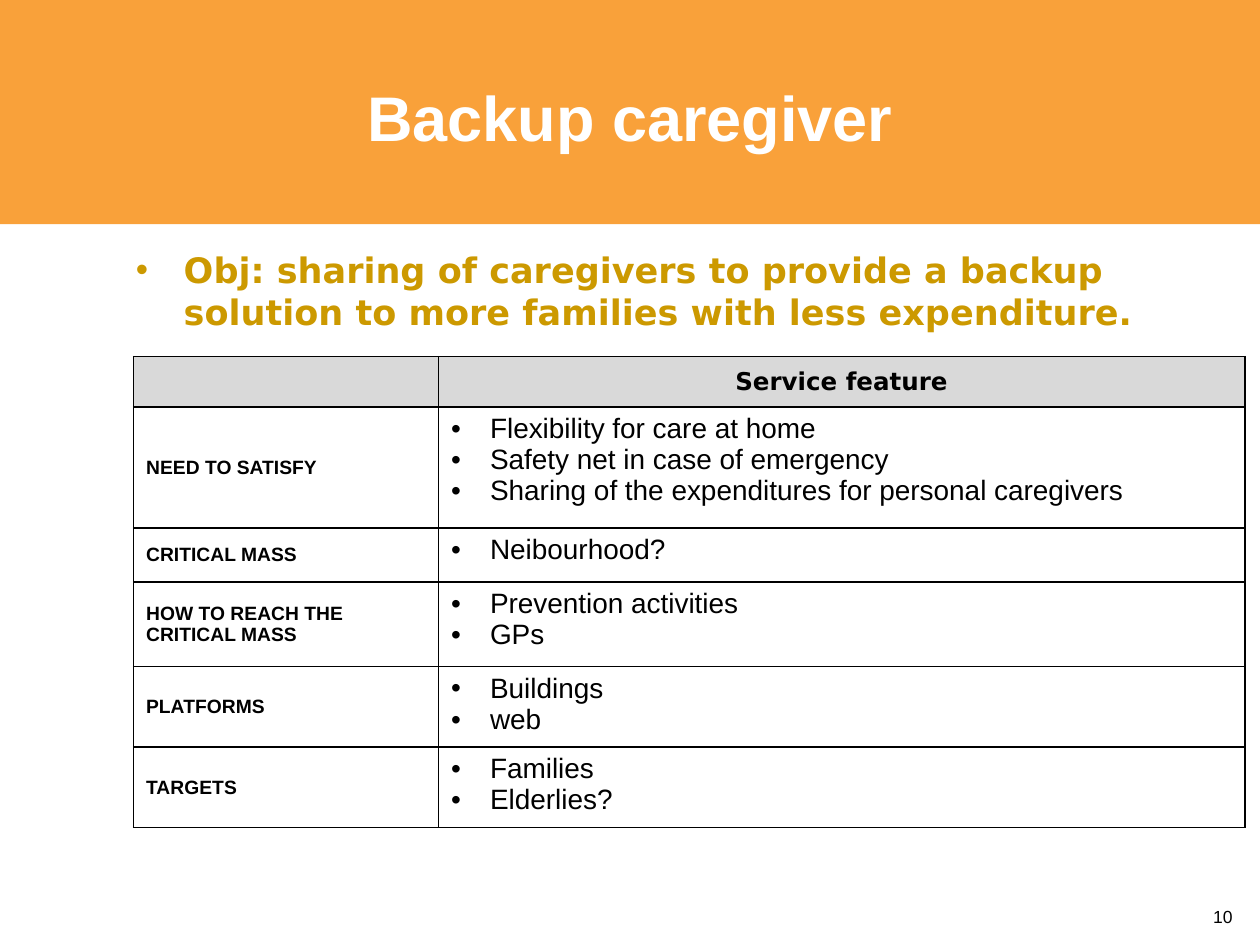
from pptx import Presentation
from pptx.dml.color import RGBColor
from pptx.enum.shapes import MSO_SHAPE
from pptx.enum.text import MSO_ANCHOR, PP_ALIGN
from pptx.oxml import parse_xml
from pptx.oxml.ns import nsdecls
from pptx.util import Inches, Pt

# Content
TITLE = "Backup caregiver"
OBJECTIVE = ("Obj: sharing of caregivers to provide a backup solution "
             "to more families with less expenditure.")
PAGE_NUMBER = "10"
HEADER = "Service feature"
HEADER_HEIGHT = 0.39
FEATURES = [  # label, points, row height
    ("NEED TO SATISFY", ["Flexibility for care at home",
                         "Safety net in case of emergency",
                         "Sharing of the expenditures for personal caregivers"], 0.96),
    ("CRITICAL MASS", ["Neibourhood?"], 0.43),
    ("HOW TO REACH THE CRITICAL MASS", ["Prevention activities", "GPs"], 0.67),
    ("PLATFORMS", ["Buildings", "web"], 0.64),
    ("TARGETS", ["Families", "Elderlies?"], 0.64),
]
COLUMN_WIDTHS = [2.42, 6.4]

ORANGE = RGBColor(0xF9, 0xA1, 0x3A)
GOLD = RGBColor(0xCC, 0x99, 0x00)
GREY = RGBColor(0xD9, 0xD9, 0xD9)
WHITE = RGBColor(0xFF, 0xFF, 0xFF)
BLACK = RGBColor(0, 0, 0)
SANS, WIDE = "Arial", "DejaVu Sans"


def write(frame, lines, size, font=SANS, color=BLACK, bold=False,
          align=PP_ALIGN.LEFT, indent=None):
    """Fill a text frame, with bullets when an indent is given."""
    frame.text = "\n".join(lines)
    for para in frame.paragraphs:
        para.alignment = align
        if indent:
            props = para._p.get_or_add_pPr()
            props.set("marL", str(Inches(indent)))
            props.set("indent", str(-Inches(indent)))
            props.append(parse_xml(f'<a:buFont {nsdecls("a")} typeface="Arial"/>'))
            props.append(parse_xml(f'<a:buChar {nsdecls("a")} char="•"/>'))
        for span in para.runs:
            span.font.size = Pt(size)
            span.font.name = font
            span.font.bold = bold
            span.font.color.rgb = color


def add_text(page, at, lines, anchor=MSO_ANCHOR.TOP, **style):
    box = page.shapes.add_textbox(*map(Inches, at))
    box.text_frame.word_wrap = True
    box.text_frame.vertical_anchor = anchor
    write(box.text_frame, lines, **style)


def style_cell(cell, fill):
    """Draw black borders on all sides and fill the cell."""
    props = cell._tc.get_or_add_tcPr()
    for side in ("lnL", "lnR", "lnT", "lnB"):
        props.append(parse_xml(
            f'<a:{side} {nsdecls("a")} w="{Pt(1)}"><a:solidFill>'
            f'<a:srgbClr val="{BLACK}"/></a:solidFill></a:{side}>'))
    cell.fill.solid()
    cell.fill.fore_color.rgb = fill


deck = Presentation()
deck.slide_width, deck.slide_height = Inches(10), Inches(7.5)
page = deck.slides.add_slide(deck.slide_layouts[6])

# Title band
band = page.shapes.add_shape(MSO_SHAPE.RECTANGLE, 0, 0, deck.slide_width, Inches(1.78))
band.shadow.inherit = False
band.fill.solid()
band.fill.fore_color.rgb = ORANGE
band.line.fill.background()
add_text(page, (0.5, 0.3, 9, 1.25), [TITLE], MSO_ANCHOR.MIDDLE,
         size=36, color=WHITE, bold=True, align=PP_ALIGN.CENTER)

# Page number
add_text(page, (8.44, 7.14, 1.44, 0.24), [PAGE_NUMBER], size=10, align=PP_ALIGN.RIGHT)

# Feature table
heights = [HEADER_HEIGHT] + [height for _, _, height in FEATURES]
table = page.shapes.add_table(
    len(heights), len(COLUMN_WIDTHS), Inches(1.06), Inches(2.83),
    Inches(sum(COLUMN_WIDTHS)), Inches(sum(heights))).table
for column, width in zip(table.columns, COLUMN_WIDTHS):
    column.width = Inches(width)
for index, (row, height) in enumerate(zip(table.rows, heights)):
    row.height = Inches(height)
    for cell in row.cells:
        style_cell(cell, WHITE if index else GREY)

header = table.cell(0, 1)
header.vertical_anchor = MSO_ANCHOR.MIDDLE
write(header.text_frame, [HEADER], 14, WIDE, bold=True, align=PP_ALIGN.CENTER)
for index, (label, points, _) in enumerate(FEATURES, start=1):
    label_cell = table.cell(index, 0)
    label_cell.vertical_anchor = MSO_ANCHOR.MIDDLE
    write(label_cell.text_frame, [label], 11, bold=True)
    write(table.cell(index, 1).text_frame, points, 16, indent=0.31)

# Objective
add_text(page, (0.98, 1.92, 8.91, 5.55), [OBJECTIVE],
         size=20, font=WIDE, color=GOLD, bold=True, indent=0.38)

deck.save("out.pptx")
